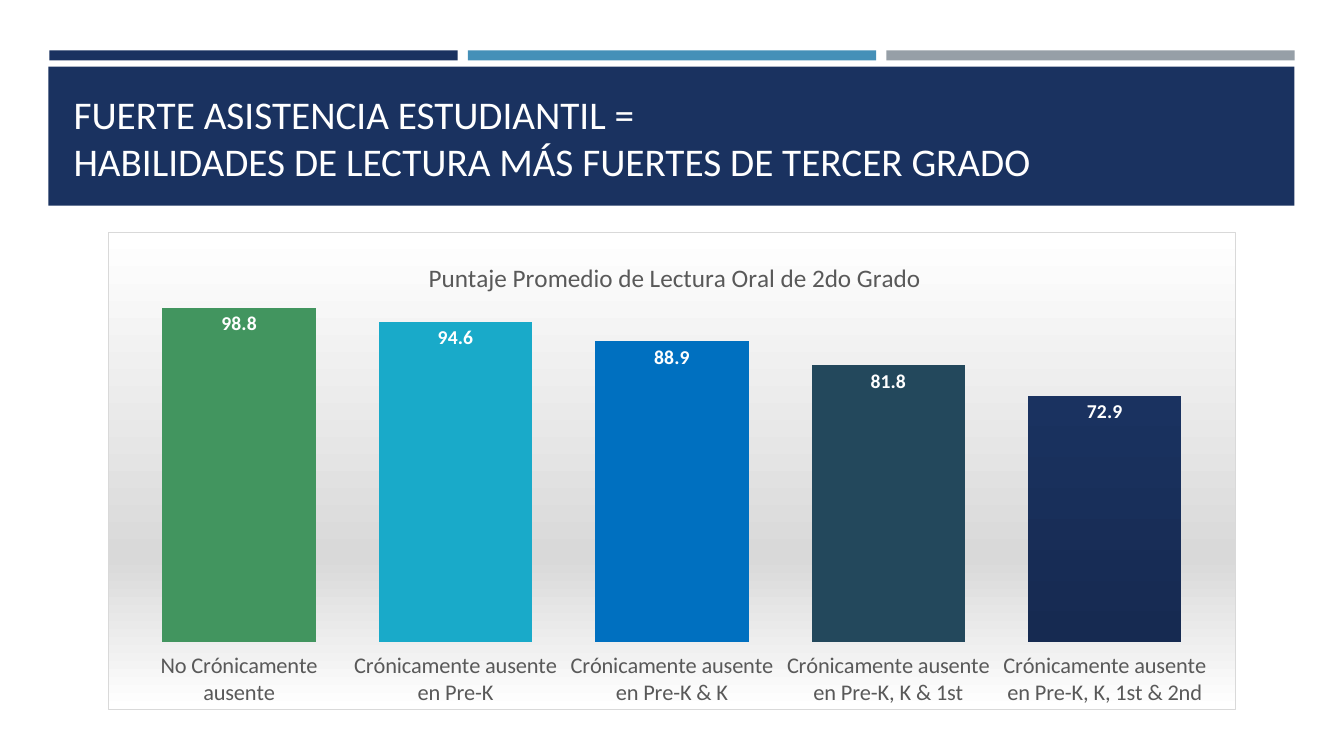
from dataclasses import dataclass

from lxml import etree
from pptx import Presentation
from pptx.chart.data import CategoryChartData
from pptx.dml.color import RGBColor
from pptx.enum.chart import XL_CHART_TYPE, XL_LABEL_POSITION, XL_TICK_LABEL_POSITION, XL_TICK_MARK
from pptx.enum.shapes import MSO_SHAPE
from pptx.enum.text import MSO_ANCHOR, MSO_AUTO_SIZE, PP_ALIGN
from pptx.oxml import parse_xml
from pptx.oxml.ns import nsdecls, qn
from pptx.util import Inches, Pt

COLUMN = XL_CHART_TYPE.COLUMN_CLUSTERED
IN_END = XL_LABEL_POSITION.INSIDE_END
LOW = XL_TICK_LABEL_POSITION.LOW
NO_TICK = XL_TICK_MARK.NONE
RECT = MSO_SHAPE.RECTANGLE
BOTTOM = MSO_ANCHOR.BOTTOM
NO_FIT = MSO_AUTO_SIZE.NONE
LEFT, CENTER = PP_ALIGN.LEFT, PP_ALIGN.CENTER


@dataclass(frozen=True)
class Theme:
    font: str = "Calibri"
    navy: str = "1A3260"
    deep: str = "162A51"
    blue: str = "4590B8"
    gray: str = "969FA7"
    white: str = "FFFFFF"
    black: str = "000000"
    text: str = "595959"
    edge: str = "D9D9D9"
    head: int = 28
    title: int = 18
    axis: int = 16
    label: int = 14
    base: int = 10


THEME = Theme()

HEAD = "FUERTE ASISTENCIA ESTUDIANTIL =\vHABILIDADES DE LECTURA MÁS FUERTES DE TERCER GRADO"
TITLE = "Puntaje Promedio de Lectura Oral de 2do Grado"
SCORES = [
    ("No Crónicamente ausente", 98.8, "42955F"),
    ("Crónicamente ausente en Pre-K", 94.6, "19AAC9"),
    ("Crónicamente ausente en Pre-K & K", 88.9, "0070C0"),
    ("Crónicamente ausente en Pre-K, K & 1st", 81.8, "23485C"),
    ("Crónicamente ausente en Pre-K, K, 1st & 2nd", 72.9, None),
]
STRIPES = [THEME.navy, THEME.blue, THEME.gray]
BACK = [(0, THEME.white), (68, THEME.edge), (100, THEME.white)]


def style(font, size, color, bold=False):
    font.name = THEME.font
    font.size = Pt(size)
    font.bold = bold
    font.color.rgb = RGBColor.from_string(color)


def write(frame, text, size, color, align=LEFT):
    frame.text = text
    for para in frame.paragraphs:
        para.alignment = align
        style(para.font, size, color)
        for run in para.runs:
            style(run.font, size, color)


def add_bar(slide, left, top, width, height, color):
    bar = slide.shapes.add_shape(RECT, *map(Inches, (left, top, width, height)))
    bar.shadow.inherit = False
    bar.fill.solid()
    bar.fill.fore_color.rgb = RGBColor.from_string(color)
    bar.line.fill.background()


def layout(spots, inner=False):
    target = '<c:layoutTarget val="inner"/>' if inner else ""
    modes = "".join(f'<c:{key}Mode val="edge"/>' for key in "xy")
    sizes = "".join(f'<c:{key} val="{val}"/>' for key, val in spots.items())
    return parse_xml(
        f'<c:layout {nsdecls("c")}><c:manualLayout>{target}{modes}{sizes}'
        "</c:manualLayout></c:layout>"
    )


def place(parent, item, after=None):
    for old in parent.findall(qn("c:layout")):
        parent.remove(old)
    if after is None:
        parent.insert(0, item)
    else:
        parent.find(qn(after)).addnext(item)


def fill_back(chart):
    props = etree.Element(qn("c:spPr"))
    grad = etree.SubElement(props, qn("a:gradFill"), rotWithShape="1")
    stops = etree.SubElement(grad, qn("a:gsLst"))
    for pos, color in BACK:
        stop = etree.SubElement(stops, qn("a:gs"), pos=str(pos * 1000))
        etree.SubElement(stop, qn("a:srgbClr"), val=color)
    etree.SubElement(grad, qn("a:lin"), ang="5400000", scaled="0")
    line = etree.SubElement(props, qn("a:ln"), w=str(Pt(0.75)))
    solid = etree.SubElement(line, qn("a:solidFill"))
    etree.SubElement(solid, qn("a:srgbClr"), val=THEME.edge)
    chart.element.find(qn("c:chart")).addnext(props)


def fill_point(fill, color):
    if color:
        fill.solid()
        fill.fore_color.rgb = RGBColor.from_string(color)
        return
    fill.gradient()
    fill.gradient_angle = 270
    for stop, shade in zip(fill.gradient_stops, (THEME.navy, THEME.deep)):
        stop.color.rgb = RGBColor.from_string(shade)


def add_scores(slide):
    data = CategoryChartData(number_format="0.0")
    data.categories = [name for name, _, _ in SCORES]
    data.add_series("Series 1", [val for _, val, _ in SCORES])
    box = map(Inches, (1.07, 2.3, 11.19, 4.74))
    chart = slide.shapes.add_chart(COLUMN, *box, data).chart
    style(chart.font, THEME.base, THEME.black)
    chart.has_legend = False
    chart.has_title = True
    write(chart.chart_title.text_frame, TITLE, THEME.title, THEME.text, CENTER)
    chart.chart_title.include_in_layout = False
    root = chart.element.find(qn("c:chart"))
    place(root.find(qn("c:title")), layout({"x": 0.28, "y": 0.05}), "c:tx")
    area = {"x": 0.02, "y": 0.15, "w": 0.96, "h": 0.71}
    place(root.find(qn("c:plotArea")), layout(area, True))
    fill_back(chart)

    cat = chart.category_axis
    cat.major_tick_mark = cat.minor_tick_mark = NO_TICK
    cat.tick_label_position = LOW
    cat.format.line.fill.background()
    style(cat.tick_labels.font, THEME.axis, THEME.text)
    val = chart.value_axis
    val.minimum_scale, val.maximum_scale = 0, 100
    val.has_major_gridlines = False
    val.visible = False

    plot = chart.plots[0]
    plot.gap_width = 41
    plot.vary_by_categories = False
    series = plot.series[0]
    series.invert_if_negative = False
    fill_point(series.format.fill, None)
    for idx, (_, _, color) in enumerate(SCORES):
        fill_point(series.points[idx].format.fill, color)
    labels = series.data_labels
    labels.show_value = True
    labels.position = IN_END
    labels.number_format = "0.0"
    labels.number_format_is_linked = False
    style(labels.font, THEME.label, THEME.white, True)


def main():
    deck = Presentation()
    deck.slide_width, deck.slide_height = Inches(13.33), Inches(7.5)
    slide = deck.slides.add_slide(deck.slide_layouts[5])
    for idx, color in enumerate(STRIPES):
        add_bar(slide, 0.49 + idx * 4.15, 0.5, 4.05, 0.1, color)
    add_bar(slide, 0.48, 0.66, 12.36, 1.38, THEME.navy)

    head = slide.shapes.title
    head.left, head.top, head.width, head.height = map(Inches, (0.63, 0.8, 12.06, 1.08))
    frame = head.text_frame
    frame.word_wrap = True
    frame.auto_size = NO_FIT
    frame.vertical_anchor = BOTTOM
    write(frame, HEAD, THEME.head, THEME.white)
    slide.shapes.element.append(head.element)

    add_scores(slide)
    deck.save("out.pptx")


if __name__ == "__main__":
    main()
